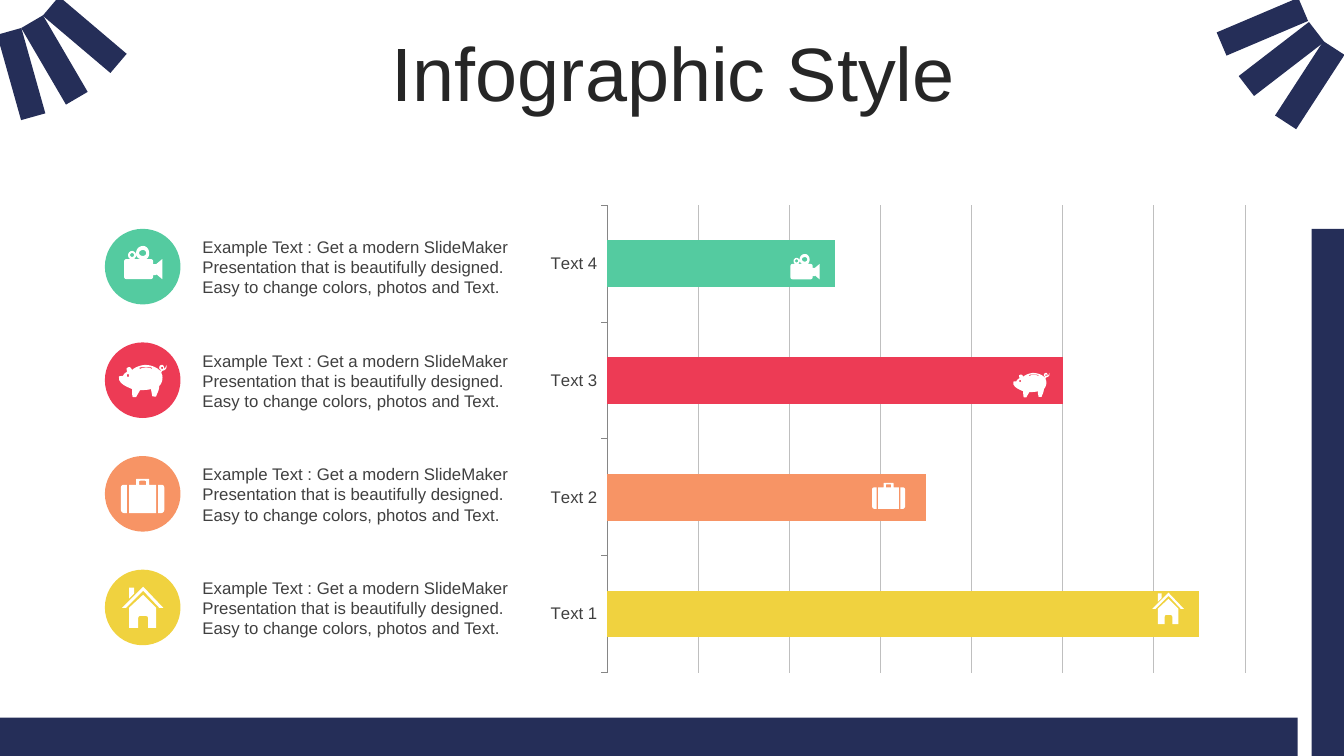
from pptx import Presentation
from pptx.chart.data import CategoryChartData
from pptx.dml.color import RGBColor
from pptx.enum.chart import XL_CHART_TYPE, XL_TICK_MARK, XL_TICK_LABEL_POSITION
from pptx.enum.shapes import MSO_SHAPE
from pptx.enum.text import MSO_ANCHOR, MSO_AUTO_SIZE, PP_ALIGN
from pptx.util import Inches, Pt
from lxml import etree

NAVY = RGBColor(0x25, 0x2E, 0x58)
GREEN = RGBColor(0x54, 0xCB, 0xA0)
RED = RGBColor(0xED, 0x3B, 0x55)
ORANGE = RGBColor(0xF7, 0x94, 0x65)
YELLOW = RGBColor(0xF0, 0xD2, 0x3F)
WHITE = RGBColor(0xFF, 0xFF, 0xFF)
BLACK = RGBColor(0x26, 0x26, 0x26)
DARK = RGBColor(0x40, 0x40, 0x40)
GRID = RGBColor(0xBF, 0xBF, 0xBF)
AXIS = RGBColor(0x86, 0x86, 0x86)
FONT = "Arial"

TITLE = "Infographic Style"
NOTE = ("Example Text : Get a modern SlideMaker Presentation that is "
        "beautifully designed. Easy to change colors, photos and Text.")

CAMERA = (
    "M 8 7 C 7 7 6 8 6 9 C 6 10 7 11 8 11 C 9 11 10 10 10 9 C 10 8 9 7 8 7 "
    "M 19 4 C 17 4 15 5 15 7 C 15 9 17 10 19 10 C 20 10 22 9 22 7 C 22 5 20 4 19 4 "
    "M 19 0 C 22 0 25 3 25 7 C 25 10 24 12 22 13 L 26 13 C 28 13 29 14 29 16 "
    "L 29 18 31 18 C 32 18 32 18 32 18 L 38 13 38 33 32 28 C 32 28 32 29 31 29 "
    "L 29 29 29 30 C 29 32 28 33 26 33 L 3 33 C 1 33 0 32 0 30 L 0 16 "
    "C 0 14 1 13 3 13 L 6 13 C 5 12 4 11 4 9 C 4 7 6 5 8 5 C 10 5 12 7 12 9 "
    "C 12 11 11 12 10 13 L 16 13 C 13 12 12 10 12 7 C 12 3 15 0 19 0")
PIG = (
    "M 9 9 C 8 9 8 10 8 11 C 8 11 8 12 9 12 C 10 12 10 11 10 11 C 10 10 10 9 9 9 "
    "M 43 2 C 42 2 42 2 42 3 C 42 4 42 4 43 4 C 43 4 44 4 44 3 C 44 2 43 2 43 2 "
    "M 27 2 C 25 2 22 2 20 3 L 21 4 C 25 2 29 2 33 4 L 33 3 C 31 2 29 2 27 2 "
    "M 26 0 C 31 0 37 2 40 5 L 41 6 C 41 6 41 6 42 5 C 41 5 40 4 40 3 "
    "C 40 1 41 0 43 0 C 44 0 45 2 45 3 C 45 4 45 3 45 4 C 45 4 46 4 47 0 "
    "C 48 4 46 5 43 6 C 43 6 42 7 42 8 L 43 10 C 44 15 42 19 40 21 "
    "C 40 25 38 28 37 31 C 37 32 33 31 33 31 C 33 29 32 27 32 24 "
    "C 28 25 24 25 21 25 C 20 27 18 30 17 32 L 14 32 C 13 32 13 26 13 24 "
    "C 9 22 -1 19 0 12 C 0 11 2 11 4 11 C 5 9 6 8 8 7 C 8 5 7 3 8 3 "
    "C 11 1 12 3 13 5 C 16 2 23 0 26 0")
CASE = (
    "M 37 6 L 40 6 C 42 6 43 7 43 9 L 43 31 C 43 32 42 34 40 34 L 37 34 "
    "M 3 6 L 6 6 6 34 3 34 C 1 34 0 32 0 31 L 0 9 C 0 7 1 6 3 6 "
    "M 19 2 C 18 2 18 3 18 3 L 18 6 25 6 25 3 C 25 3 25 2 24 2 "
    "M 17 0 L 26 0 C 27 0 28 0 28 1 L 28 6 35 6 35 34 8 34 8 6 15 6 15 1 "
    "C 15 0 16 0 17 0")
HOUSE = (
    "M 21 8 L 34 21 34 41 26 41 26 32 C 26 30 25 29 23 29 L 18 29 "
    "C 17 29 16 30 16 32 L 16 41 7 41 7 21 "
    "M 7 1 L 12 1 12 7 7 12 M 21 0 L 41 21 37 21 21 4 M 21 0 L 21 4 4 21 0 21")

ROWS = [
    ("Text 4", 2.5, GREEN, CAMERA, (1.23, 2.44), (7.84, 2.52)),
    ("Text 3", 5, RED, PIG, (1.18, 3.62), (10.05, 3.7)),
    ("Text 2", 3.5, ORANGE, CASE, (1.2, 4.75), (8.65, 4.79)),
    ("Text 1", 6.5, YELLOW, HOUSE, (1.21, 5.82), (11.43, 5.88)),
]
FANS = [
    (-0.23, 0.61, 74.3), (0.1, 0.47, 59.7), (0.4, 0.22, 40.3),
    (12.08, 0.14, 157), (12.27, 0.46, 142.4), (12.55, 0.72, 123),
]
BANDS = [(0, 7.12, 12.87, 0.38), (13.01, 2.27, 0.33, 5.23)]
TOP, STEP, DISC = 2.27, 1.127, 0.75
SMALL = 0.76

deck = Presentation()
deck.slide_width, deck.slide_height = Inches(13.33), Inches(7.5)
slide = deck.slides.add_slide(deck.slide_layouts[6])
shapes = slide.shapes


def paint(shape, color):
    shape.shadow.inherit = False
    shape.fill.solid()
    shape.fill.fore_color.rgb = color
    shape.line.fill.background()


def block(kind, box, color, turn=0):
    shape = shapes.add_shape(kind, *map(Inches, box))
    shape.rotation = turn
    paint(shape, color)


def write(box, words, size, color):
    shape = shapes.add_textbox(*map(Inches, box))
    frame = shape.text_frame
    frame.word_wrap = True
    para = frame.paragraphs[0]
    para.text = words
    para.font.name, para.font.size = FONT, Pt(size)
    para.font.color.rgb = color
    return frame, para


def trace(outline):
    mode, nums, points = "L", [], []
    for word in outline.split():
        if word in "LC":
            mode = word
            continue
        nums.append(float(word))
        if mode == "L" and len(nums) == 2:
            points.append(tuple(nums))
            nums = []
        elif mode == "C" and len(nums) == 6:
            ends = [points[-1], nums[:2], nums[2:4], nums[4:]]
            for k in range(1, 7):
                t = k / 6
                mix = ((1 - t) ** 3, 3 * t * (1 - t) ** 2, 3 * t * t * (1 - t), t ** 3)
                points.append(tuple(sum(m * e[i] for m, e in zip(mix, ends))
                                    for i in (0, 1)))
            nums = []
    return points


def icon(outline, spot, scale):
    pen = None
    for part in outline.split("M")[1:]:
        points = [tuple(Inches(s + v * scale / 100) for s, v in zip(spot, point))
                  for point in trace(part)]
        if pen is None:
            pen = shapes.build_freeform(*points[0], scale=1.0)
        else:
            pen.move_to(*points[0])
        pen.add_line_segments(points[1:], close=True)
    paint(pen.convert_to_shape(), WHITE)


def plot():
    data = CategoryChartData()
    bars = ROWS[::-1]
    data.categories = [row[0] for row in bars]
    data.add_series("Series 1", [row[1] for row in bars])
    chart = shapes.add_chart(XL_CHART_TYPE.BAR_STACKED,
                             *map(Inches, (5.32, 1.94, 7.18, 4.83)), data).chart
    chart.has_legend = chart.has_title = False
    chart.font.name, chart.font.size = FONT, Pt(12)
    chart.font.color.rgb = DARK
    bar = chart.plots[0]
    bar.gap_width, bar.overlap, bar.vary_by_categories = 150, 100, False
    series = bar.series[0]
    series.format.fill.solid()
    series.format.fill.fore_color.rgb = DARK
    for i, row in enumerate(bars):
        fill = series.points[i].format.fill
        fill.solid()
        fill.fore_color.rgb = row[2]
    cat, val = chart.category_axis, chart.value_axis
    cat.major_tick_mark = XL_TICK_MARK.OUTSIDE
    cat.tick_label_position = XL_TICK_LABEL_POSITION.NEXT_TO_AXIS
    cat.format.line.color.rgb = AXIS
    cat.format.line.width = Pt(0.75)
    val.minimum_scale, val.maximum_scale, val.major_unit = 0, 7, 1
    val.visible = False
    val.has_major_gridlines = True
    val.major_gridlines.format.line.color.rgb = GRID
    val.major_gridlines.format.line.width = Pt(0.75)
    area = chart.element.chart.plotArea
    space = area.nsmap["c"]
    for old in area.findall(f"{{{space}}}layout"):
        area.remove(old)
    layout = etree.Element(f"{{{space}}}layout")
    manual = etree.SubElement(layout, f"{{{space}}}manualLayout")
    for tag, value in (("layoutTarget", "inner"), ("xMode", "edge"), ("yMode", "edge"),
                       ("x", 0.098), ("y", 0.02), ("w", 0.881), ("h", 0.96)):
        etree.SubElement(manual, f"{{{space}}}{tag}").set("val", str(value))
    area.insert(0, layout)


for left, top, turn in FANS:
    block(MSO_SHAPE.RECTANGLE, (left, top, 0.88, 0.25), NAVY, turn)
frame, para = write((0.35, 0.37, 12.66, 0.79), TITLE, 54, BLACK)
frame.vertical_anchor = MSO_ANCHOR.MIDDLE
para.alignment, para.line_spacing = PP_ALIGN.CENTER, 0.9
para.space_before = Pt(10)
plot()
for i, (name, value, color, outline, large, small) in enumerate(ROWS):
    top = TOP + i * STEP
    block(MSO_SHAPE.OVAL, (1.04, top, DISC, DISC), color)
    frame, para = write((1.91, top + 0.03, 3.5, 0.71), NOTE, 12, DARK)
    frame.auto_size = MSO_AUTO_SIZE.SHAPE_TO_FIT_TEXT
    icon(outline, large, 1)
    icon(outline, small, SMALL)
for box in BANDS:
    block(MSO_SHAPE.RECTANGLE, box, NAVY)

deck.save("out.pptx")
